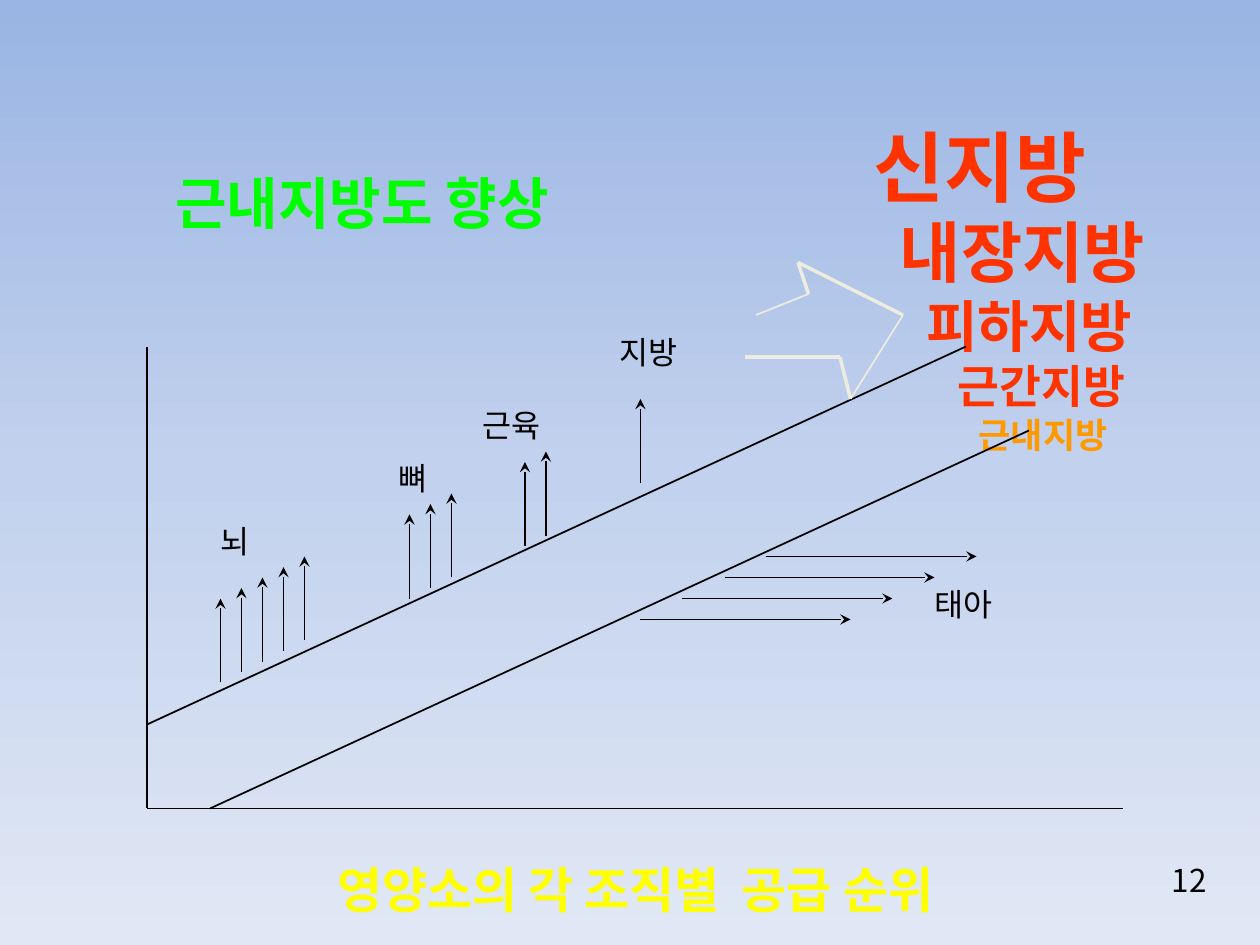
from copy import deepcopy

from pptx import Presentation
from pptx import util as u
from pptx.dml.color import RGBColor
from pptx.enum import shapes, text
from pptx.oxml.ns import qn

BLACK, CREAM, RED = "000000", "EEECE1", "FF3300"
KOREAN = "Noto Sans CJK KR"


def color(value):
    return RGBColor.from_string(value)


def cells(count):
    """Grid of 120 columns by 90 rows: twelve cells to the inch."""
    return u.Inches(count / 12)


class Sheet:
    def __init__(self, slide):
        self.slide = slide

    def background(self, colors):
        fill = self.slide.background.fill
        fill.gradient()
        fill.gradient_angle = 270
        stops = self.slide.element.find(".//" + qn("a:gsLst"))
        while len(stops) < len(colors):
            stops.append(deepcopy(stops[0]))
        for index, stop in enumerate(fill.gradient_stops):
            stop.color.rgb = color(colors[index])
            stop.position = index / (len(colors) - 1)

    def line(self, start, end, ink=BLACK, width=1, arrow=False):
        connector = self.slide.shapes.add_connector(
            shapes.MSO_CONNECTOR.STRAIGHT, *map(cells, (*start, *end)))
        connector.line.color.rgb = color(ink)
        connector.line.width = u.Pt(width)
        properties = connector.element.spPr
        if arrow:
            outline = properties.find(qn("a:ln"))
            outline.append(outline.makeelement(qn("a:tailEnd"), {"type": "stealth"}))
        properties.append(properties.makeelement(qn("a:effectLst"), {}))

    def place(self, shape, at, anchor=text.MSO_ANCHOR.TOP):
        shape.left, shape.top, shape.width, shape.height = map(cells, at)
        frame = shape.text_frame
        frame.word_wrap = True
        frame.auto_size = text.MSO_AUTO_SIZE.NONE
        frame.vertical_anchor = anchor
        frame.margin_left = frame.margin_right = u.Inches(0.1)
        frame.margin_top = frame.margin_bottom = u.Inches(0.05)
        return frame

    def add_words(self, paragraph, words, size, ink=BLACK, bold=False, font=KOREAN,
                  align=text.PP_ALIGN.LEFT, leading=1.3, indent=0):
        properties = paragraph._p.get_or_add_pPr()
        properties.set("marL", str(cells(indent)))
        properties.set("indent", "0")
        properties.append(properties.makeelement(qn("a:buNone"), {}))
        paragraph.alignment = align
        paragraph.space_before = u.Pt(0)
        paragraph.line_spacing = u.Pt(round(size * leading, 1))
        run = paragraph.add_run()
        run.text = words
        run.font.name = font
        run.font.size = u.Pt(size)
        run.font.bold = bold
        run.font.color.rgb = color(ink)
        east_asian = run._r.rPr.makeelement(qn("a:ea"), {"typeface": KOREAN})
        run._r.rPr.find(qn("a:latin")).addnext(east_asian)

    def title(self, words, at, size, ink):
        frame = self.place(self.slide.shapes.title, at, text.MSO_ANCHOR.MIDDLE)
        self.add_words(frame.paragraphs[0], words, size, ink, True,
                       align=text.PP_ALIGN.CENTER)

    def label(self, words, at, size=18, **style):
        box = self.slide.shapes.add_textbox(0, 0, 0, 0)
        self.add_words(self.place(box, at).paragraphs[0], words, size, **style)

    def ranking(self, items, at):
        frame = self.place(self.slide.placeholders[1], at)
        for index, (words, size, indent, ink) in enumerate(items):
            paragraph = frame.add_paragraph() if index else frame.paragraphs[0]
            self.add_words(paragraph, words, size, ink, True, "Arial",
                           leading=1.2 if index else 1.3, indent=indent)


def main():
    presentation = Presentation()
    presentation.slide_width, presentation.slide_height = cells(120), cells(90)
    sheet = Sheet(presentation.slides.add_slide(presentation.slide_layouts[1]))
    sheet.background(["9AB5E4", "C2D1ED", "E1E8F5"])

    # Title and page number
    sheet.title("근내지방도 향상", (6.5, 14, 56, 10), 32, "00FF00")
    sheet.label("12", (110.4, 81.1, 8, 6))

    # Axes and the two sloping supply lines
    for start, end in [((14, 33), (14, 77)), ((14, 77), (107, 77)),
                       ((14, 69), (92, 33)), ((20, 77), (98, 41))]:
        sheet.line(start, end)

    # Supply arrows: each group climbs one row every two columns
    for column, row, count in [(21, 65, 5), (39, 57, 3), (50, 52, 2), (61, 46, 1)]:
        for step in range(count):
            x, y = column + 2 * step, row - step
            sheet.line((x, y), (x, y - 8), arrow=True)

    # Arrows to the foetus
    for step in range(4):
        x, y = 73 - 4 * step, 53 + 2 * step
        sheet.line((x, y), (x + 20, y), arrow=True)

    # Tissue names
    for words, left, top, width in [
            ("뇌", 19.8, 48.8, 6.4), ("뼈", 36.8, 42.8, 7.2),
            ("근육", 44.8, 37.8, 10.4), ("지방", 57.8, 30.8, 10.4),
            ("태아", 87.8, 54.8, 10.4)]:
        sheet.label(words, (left, top, width, 6))

    # Caption
    sheet.label("영양소의 각 조직별  공급 순위", (28.4, 80.8, 64.2, 6.8), 28,
                ink="FFFF00", bold=True, align=text.PP_ALIGN.CENTER)

    # Fat deposits in order of supply
    sheet.ranking([("신지방", 44, 0, RED), ("내장지방", 38, 2.5, RED),
                   ("피하지방", 32, 5, RED), ("근간지방", 26, 8, RED),
                   ("근내지방", 20, 10, "FF9900")], (82, 10, 37, 34.4))

    # Open outline arrow from fat to its deposits
    for start, end, width in [
            ((71, 34), (80, 34), 2), ((77, 28), (76, 25), 2),
            ((76, 25), (86, 30), 2), ((80, 34), (81, 38), 2),
            ((86, 30), (81, 38), 1), ((77, 28), (72, 30), 1)]:
        sheet.line(start, end, CREAM, width)

    presentation.save("out.pptx")


if __name__ == "__main__":
    main()
